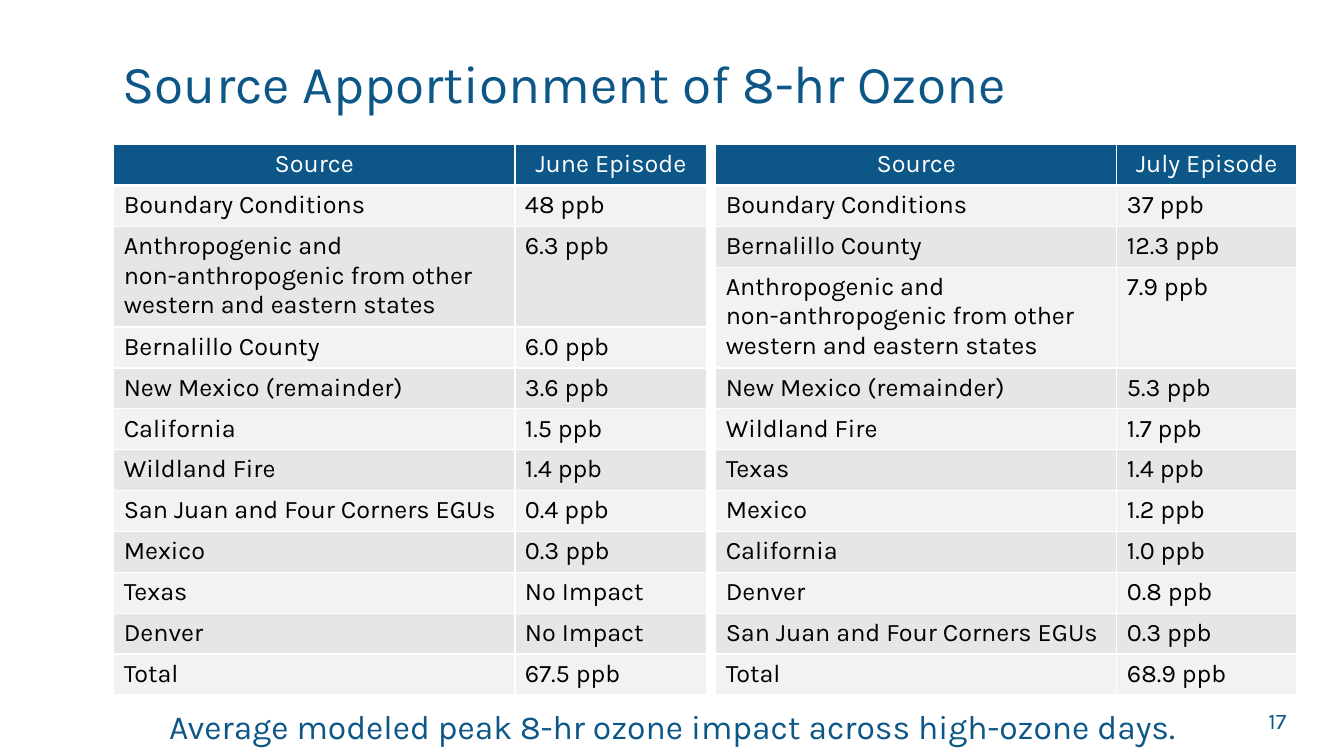
from lxml import etree
from pptx import Presentation
from pptx.dml.color import RGBColor
from pptx.enum import text
from pptx.oxml.ns import qn
from pptx.util import Pt

BLUE, WHITE, BLACK = "0C5788", "FFFFFF", "000000"
BANDS = ["F2F2F2", "E6E6E6"]
ROW_H, TALL_ROW_H = 29.2, 72
ALIGN = text.PP_ALIGN
REGIONS = "Anthropogenic and \nnon-anthropogenic from other western and eastern states"


def paint(fmt, color):
    """Set a fill or font colour from a hex string."""
    if hasattr(fmt, "solid"):
        fmt.solid()
        fmt.fore_color.rgb = RGBColor.from_string(color)
    else:
        fmt.color.rgb = RGBColor.from_string(color)


def write(tf, content, size, color, align):
    """Write one paragraph; a newline becomes a line break."""
    tf.word_wrap = True
    p = tf.paragraphs[0]
    p.alignment = align
    for i, line in enumerate(content.split("\n")):
        if i:
            p.add_line_break()
        r = p.add_run()
        r.text = line
        r.font.size = Pt(size)
        r.font.name = "Karla"
        paint(r.font, color)
    return p


prs = Presentation()
prs.slide_width, prs.slide_height = Pt(960), Pt(540)
s = prs.slides.add_slide(prs.slide_layouts[6])

# Title, page number and caption
MIDDLE, TOP = text.MSO_ANCHOR.MIDDLE, text.MSO_ANCHOR.TOP
labels = [
    ("Source Apportionment of 8-hr Ozone", (80.6, 28.8, 798.5, 66.2), 38, ALIGN.LEFT, MIDDLE, 0.9),
    ("17", (678.2, 500.4, 247.7, 28.8), 16, ALIGN.RIGHT, MIDDLE, 1),
    ("Average modeled peak 8-hr ozone impact across high-ozone days.",
     (57.6, 500.4, 845.3, 36), 24, ALIGN.CENTER, TOP, 1),
]
for content, box, size, align, anchor, spacing in labels:
    tf = s.shapes.add_textbox(*map(Pt, box)).text_frame
    tf.vertical_anchor = anchor
    write(tf, content, size, BLUE, align).line_spacing = spacing

# Episode tables: left, column widths, rows
june = [
    ("Source", "June Episode"),
    ("Boundary Conditions", "48 ppb"),
    (REGIONS, "6.3 ppb"),
    ("Bernalillo County", "6.0 ppb"),
    ("New Mexico (remainder)", "3.6 ppb"),
    ("California", "1.5 ppb"),
    ("Wildland Fire", "1.4 ppb"),
    ("San Juan and Four Corners EGUs", "0.4 ppb"),
    ("Mexico", "0.3 ppb"),
    ("Texas", "No Impact"),
    ("Denver", "No Impact"),
    ("Total", "67.5 ppb"),
]
july = [
    ("Source", "July Episode"),
    ("Boundary Conditions", "37 ppb"),
    ("Bernalillo County", "12.3 ppb"),
    (REGIONS, "7.9 ppb"),
    ("New Mexico (remainder)", "5.3 ppb"),
    ("Wildland Fire", "1.7 ppb"),
    ("Texas", "1.4 ppb"),
    ("Mexico", "1.2 ppb"),
    ("California", "1.0 ppb"),
    ("Denver", "0.8 ppb"),
    ("San Juan and Four Corners EGUs", "0.3 ppb"),
    ("Total", "68.9 ppb"),
]
for left, widths, rows in [(81.2, (286.6, 137.2), june), (511.2, (286.6, 128.4), july)]:
    height = ROW_H * (len(rows) - 1) + TALL_ROW_H
    table = s.shapes.add_table(len(rows), 2, Pt(left), Pt(103.2), Pt(sum(widths)), Pt(height)).table
    for column, width in zip(table.columns, widths):
        column.width = Pt(width)
    for i, row in enumerate(rows):
        header = i == 0
        table.rows[i].height = Pt(TALL_ROW_H if row[0] == REGIONS else ROW_H)
        for j, content in enumerate(row):
            cell = table.cell(i, j)
            write(cell.text_frame, content, 18, WHITE if header else BLACK,
                  ALIGN.CENTER if header else ALIGN.LEFT)
            # White borders come before the fill in the cell properties
            tcPr = cell._tc.get_or_add_tcPr()
            for side in ("lnL", "lnR", "lnT", "lnB"):
                weight = 3 if header and side == "lnB" else 1
                ln = etree.SubElement(tcPr, qn("a:" + side), w=str(Pt(weight)))
                fill = etree.SubElement(ln, qn("a:solidFill"))
                etree.SubElement(fill, qn("a:srgbClr"), val=WHITE)
            paint(cell.fill, BLUE if header else BANDS[(i - 1) % 2])

prs.save("out.pptx")
